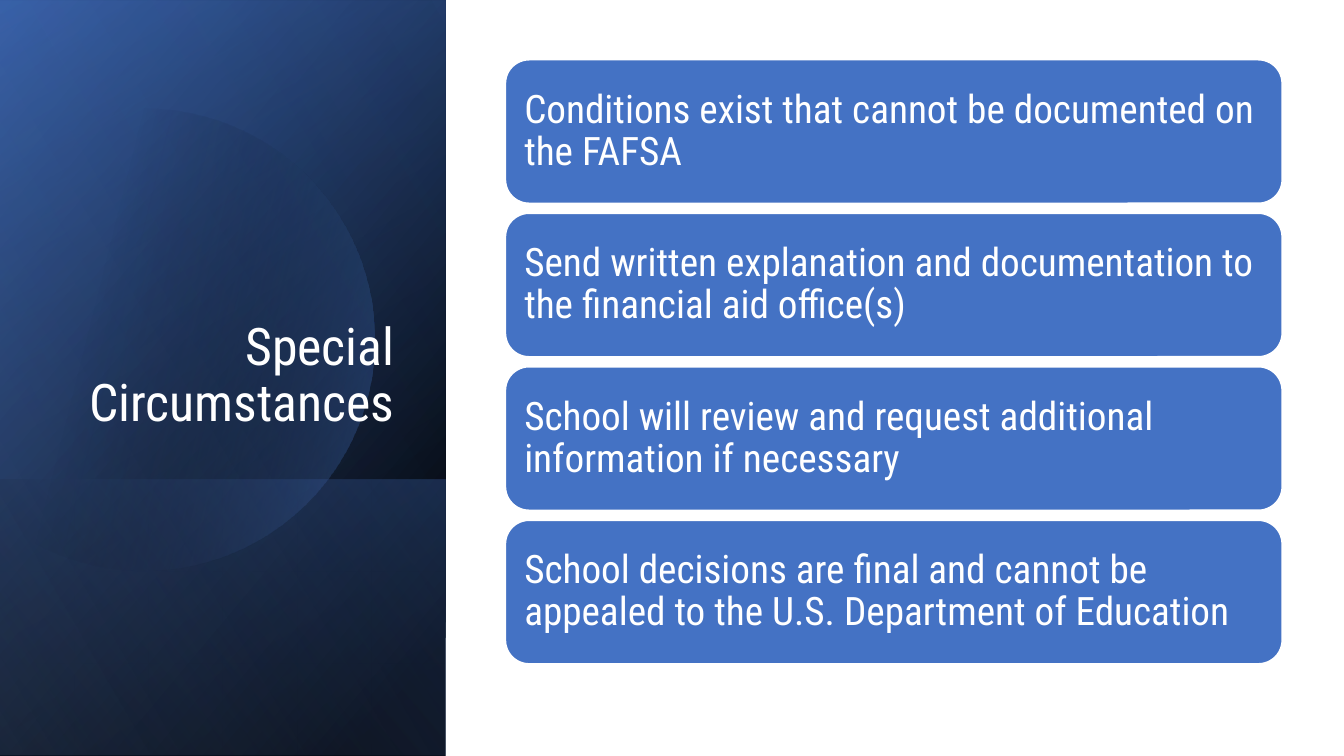
import math
import pptx
import pptx.util
import pptx.oxml
import pptx.oxml.ns
import pptx.dml.color
import pptx.enum.shapes
import pptx.enum.text

Inches = pptx.util.Inches
SHAPE = pptx.enum.shapes.MSO_SHAPE
ALIGN = pptx.enum.text.PP_ALIGN
ANCHOR = pptx.enum.text.MSO_ANCHOR
FONT = "Roboto Condensed"
COLORS = {
    "black": "000000", "navy": "2F5597", "blue": "4472C4",
    "pale": "8FAADC", "white": "FFFFFF",
}
LONG, WIDE = 7.5, 4.42
# left, top, length, angle, stops (position, colour, opacity)
BACK = [
    (-1.54, 1.54, LONG, 50, [(8, "black", 100), (100, "navy", 100)]),
    (-1.54, 1.55, LONG, 30, [(0, "black", 0), (99, "blue", 46)]),
    (0.84, 3.92, 2.74, 130, [(2, "blue", 29), (100, "black", 30)]),
]
GLOW = (-1.54, 1.53, LONG, 120, [(0, "black", 0), (99, "pale", 11)])
STEPS = [
    "Conditions exist that cannot be documented on the FAFSA",
    "Send written explanation and documentation to the financial aid office(s)",
    "School will review and request additional information if necessary",
    "School decisions are final and cannot be appealed to the U.S. "
    "Department of Education",
]


def color(name):
    return pptx.dml.color.RGBColor.from_string(COLORS[name])


def shade(shape, angle, stops):
    """Fill with a linear gradient whose stops may be see-through."""
    shape.shadow.inherit = False
    shape.line.fill.background()
    marks = "".join(
        f'<a:gs pos="{pos * 1000}"><a:srgbClr val="{COLORS[name]}">'
        f'<a:alpha val="{alpha * 1000}"/></a:srgbClr></a:gs>'
        for pos, name, alpha in stops)
    fill = pptx.oxml.parse_xml(
        f'<a:gradFill {pptx.oxml.ns.nsdecls("a")} rotWithShape="1">'
        f'<a:gsLst>{marks}</a:gsLst>'
        f'<a:lin ang="{angle * 60000}" scaled="0"/></a:gradFill>')
    shape.line._get_or_add_ln().addprevious(fill)


def panel(slide, left, top, length, angle, stops):
    """Add a mirrored rectangle turned upright."""
    shape = slide.shapes.add_shape(
        SHAPE.RECTANGLE, Inches(left), Inches(top), Inches(length), Inches(WIDE))
    shape.rotation = 90
    shape._element.spPr.xfrm.set("flipH", "1")
    shade(shape, angle, stops)


def disc(slide):
    """Add the large circle, cut off at the slide's left edge."""
    x, y, radius = 1.42, 3.37, 2.29
    limit = math.acos(-x / radius)
    count = 120
    turns = [limit * (2 * i / count - 1) for i in range(count + 1)]
    points = [(Inches(x + radius * math.cos(t)), Inches(y + radius * math.sin(t)))
              for t in turns]
    pen = slide.shapes.build_freeform(*points[0])
    pen.add_line_segments(points[1:], close=True)
    shade(pen.convert_to_shape(), 14, [(29, "black", 0), (100, "blue", 43)])


def write(shape, text, size, align, anchor):
    frame = shape.text_frame
    frame.word_wrap = True
    frame.vertical_anchor = anchor
    para = frame.paragraphs[0]
    para.alignment = align
    para.line_spacing = 0.9
    run = para.add_run()
    run.text = text
    run.font.name = FONT
    run.font.size = pptx.util.Pt(size)
    run.font.color.rgb = color("white")


def card(slide, top, text):
    shape = slide.shapes.add_shape(
        SHAPE.ROUNDED_RECTANGLE, Inches(5.01), Inches(top), Inches(7.71), Inches(1.43))
    shape.shadow.inherit = False
    shape.fill.solid()
    shape.fill.fore_color.rgb = color("blue")
    shape.line.color.rgb = color("white")
    shape.line.width = pptx.util.Pt(1.5)
    frame = shape.text_frame
    frame.margin_left = frame.margin_right = Inches(0.12)
    frame.margin_top = frame.margin_bottom = Inches(0.12)
    write(shape, text, 28, ALIGN.LEFT, ANCHOR.MIDDLE)


def main():
    deck = pptx.Presentation()
    deck.slide_width, deck.slide_height = Inches(13.33), Inches(7.5)
    slide = deck.slides.add_slide(deck.slide_layouts[6])
    for item in BACK:
        panel(slide, *item)
    disc(slide)
    panel(slide, *GLOW)
    title = slide.shapes.add_textbox(
        Inches(0.51), Inches(0.64), Inches(3.5), Inches(3.7))
    write(title, "Special Circumstances", 37, ALIGN.RIGHT, ANCHOR.BOTTOM)
    for i, text in enumerate(STEPS):
        card(slide, 0.59 + 1.523 * i, text)
    deck.save("out.pptx")


if __name__ == "__main__":
    main()
